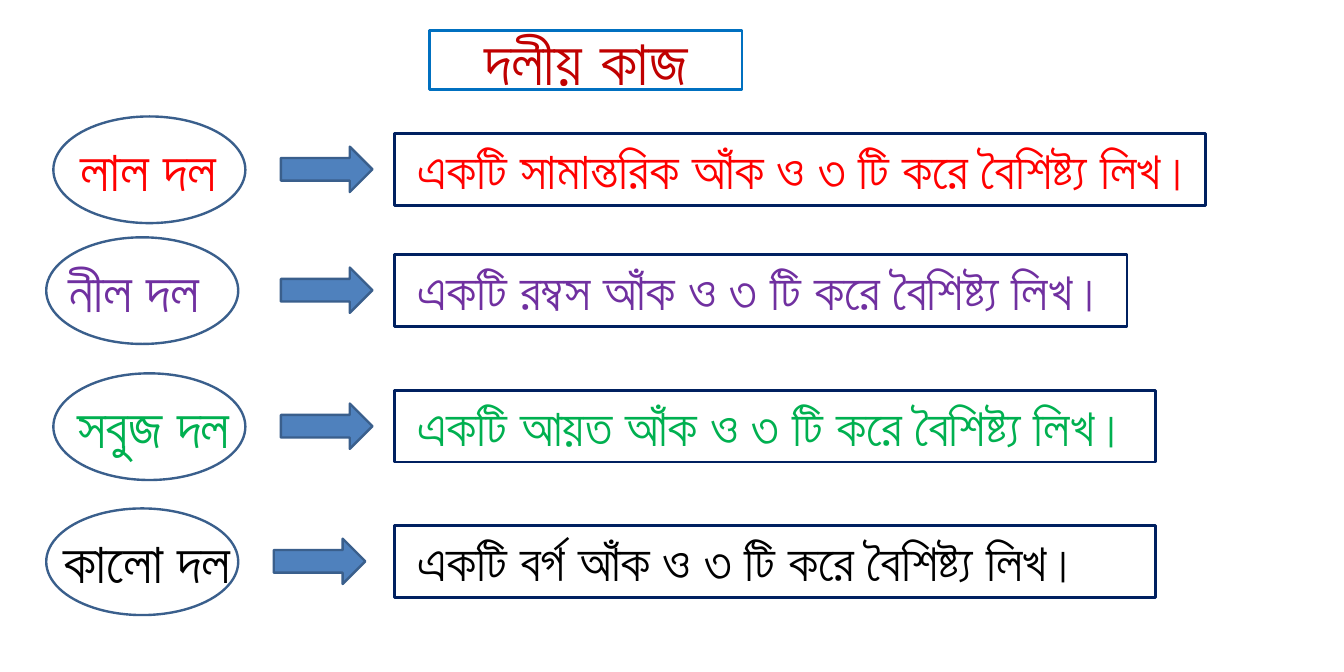
from dataclasses import dataclass

import pptx
import pptx.dml.color
import pptx.enum.shapes
import pptx.enum.text
import pptx.shapes.autoshape
import pptx.slide
import pptx.util

PX = 9525  # EMU per px, 96 px to the inch
RGBColor = pptx.dml.color.RGBColor
MSO_SHAPE = pptx.enum.shapes.MSO_SHAPE
PP_ALIGN = pptx.enum.text.PP_ALIGN
MSO_ANCHOR = pptx.enum.text.MSO_ANCHOR

RED = RGBColor(0xFF, 0x00, 0x00)
PURPLE = RGBColor(0x70, 0x30, 0xA0)
GREEN = RGBColor(0x00, 0xB0, 0x50)
BLACK = RGBColor(0x00, 0x00, 0x00)
TITLE_RED = RGBColor(0xC0, 0x00, 0x00)
TITLE_BORDER = RGBColor(0x00, 0x70, 0xC0)
ARROW_BLUE = RGBColor(0x4F, 0x81, 0xBD)
OUTLINE_BLUE = RGBColor(0x3A, 0x5F, 0x8C)
NAVY = RGBColor(0x00, 0x20, 0x60)

INSET = 10
TASK_LEFT, TASK_INDENT = 444, 16


@dataclass(frozen=True)
class Box:
    left: int
    top: int
    width: int
    height: int

    def emu(self) -> tuple[int, ...]:
        return tuple(v * PX for v in (self.left, self.top, self.width, self.height))


@dataclass(frozen=True)
class Group:
    name: str
    task: str
    color: RGBColor
    top: int
    oval_left: int
    name_left: int
    name_width: int
    name_indent: int
    arrow_left: int
    task_width: int


GROUPS = [
    Group("লাল দল", "একটি সামান্তরিক আঁক ও ৩ টি করে বৈশিষ্ট্য লিখ।",
          RED, 131, 60, 52, 256, 29, 316, 912),
    Group("নীল দল", "একটি রম্বস আঁক ও ৩ টি করে বৈশিষ্ট্য লিখ।",
          PURPLE, 267, 52, 53, 205, 14, 316, 824),
    Group("সবুজ দল", "একটি আয়ত আঁক ও ৩ টি করে বৈশিষ্ট্য লিখ।",
          GREEN, 420, 60, 48, 256, 29, 316, 856),
    Group("কালো দল", "একটি বর্গ আঁক ও ৩ টি করে বৈশিষ্ট্য লিখ।",
          BLACK, 572, 52, 32, 256, 29, 308, 856),
]


def add_outlined(slide: pptx.slide.Slide, preset: MSO_SHAPE, box: Box, line: RGBColor,
                 weight: float, fill: RGBColor | None = None) -> pptx.shapes.autoshape.Shape:
    shape = slide.shapes.add_shape(preset, *box.emu())
    shape.shadow.inherit = False
    if fill is None:
        shape.fill.background()
    else:
        shape.fill.solid()
        shape.fill.fore_color.rgb = fill
    shape.line.color.rgb = line
    shape.line.width = pptx.util.Pt(weight)
    return shape


def write(shape: pptx.shapes.autoshape.Shape, text: str, size: int, color: RGBColor,
          indent: int = 0) -> None:
    frame = shape.text_frame
    frame.text = text
    frame.word_wrap = True
    frame.vertical_anchor = MSO_ANCHOR.TOP
    frame.auto_size = pptx.enum.text.MSO_AUTO_SIZE.SHAPE_TO_FIT_TEXT
    frame.margin_left = (INSET + indent) * PX
    paragraph = frame.paragraphs[0]
    paragraph.alignment = PP_ALIGN.LEFT
    font = paragraph.runs[0].font
    font.name = "Arial"
    font.size = pptx.util.Pt(size)
    font.color.rgb = color


def add_title(slide: pptx.slide.Slide) -> None:
    title = add_outlined(slide, MSO_SHAPE.RECTANGLE, Box(483, 34, 352, 67),
                         TITLE_BORDER, 2.25)
    write(title, "দলীয় কাজ", 54, TITLE_RED)
    title.text_frame.auto_size = pptx.enum.text.MSO_AUTO_SIZE.NONE
    title.text_frame.vertical_anchor = MSO_ANCHOR.MIDDLE
    heading = title.text_frame.paragraphs[0]
    heading.alignment = PP_ALIGN.CENTER
    heading.runs[0].font.bold = True


def add_group(slide: pptx.slide.Slide, group: Group) -> None:
    # Oval with the group name over it
    add_outlined(slide, MSO_SHAPE.OVAL, Box(group.oval_left, group.top, 216, 120),
                 OUTLINE_BLUE, 2)
    name_box = Box(group.name_left, group.top + 16, group.name_width, 87)
    name = slide.shapes.add_textbox(*name_box.emu())
    write(name, group.name, 48, group.color, group.name_indent)

    # Arrow to the task
    add_outlined(slide, MSO_SHAPE.RIGHT_ARROW, Box(group.arrow_left, group.top + 34, 103, 51),
                 OUTLINE_BLUE, 2, ARROW_BLUE)

    # Task frame
    task = add_outlined(slide, MSO_SHAPE.RECTANGLE,
                        Box(TASK_LEFT, group.top + 19, group.task_width, 81), NAVY, 2.25)
    write(task, group.task, 44, group.color, TASK_INDENT)


def main() -> None:
    deck = pptx.Presentation()
    deck.slide_width, deck.slide_height = 1512 * PX, 756 * PX
    slide = deck.slides.add_slide(deck.slide_layouts[6])
    add_title(slide)
    for group in GROUPS:
        add_group(slide, group)
    deck.save("out.pptx")


if __name__ == "__main__":
    main()
